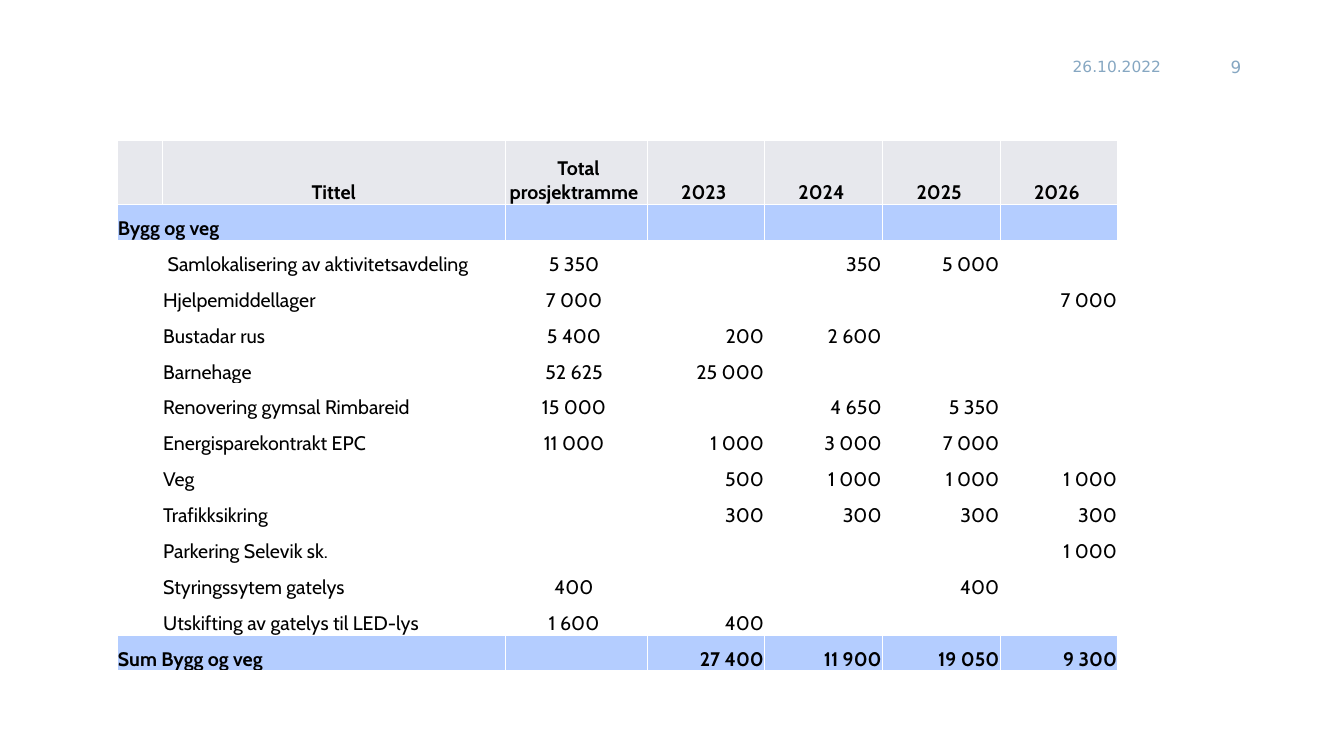
from dataclasses import dataclass

from lxml import etree
from pptx import Presentation
from pptx import util as u
from pptx.dml.color import RGBColor
from pptx.enum import text
from pptx.oxml import ns


@dataclass(frozen=True)
class Theme:
    ink: str = "000000"
    muted: str = "86A7C2"
    head: str = "E7E8ED"
    band: str = "B4CDFF"
    line: str = "FFFFFF"
    font: str = "Cabin"
    plain: str = "DejaVu Sans"
    body: int = 14
    date: int = 11
    page: int = 12


THEME = Theme()
LEFT, MID, RIGHT = text.PP_ALIGN.LEFT, text.PP_ALIGN.CENTER, text.PP_ALIGN.RIGHT

COLS = [0.45, 3.41, 1.41] + [1.17] * 4
HEAD = ["", "Tittel", " Total prosjektramme ", "2023 ", "2024 ", "2025 ", "2026 "]
# Title, total frame, then one amount per year
ITEMS = [
    [" Samlokalisering av aktivitetsavdeling", "5 350 ", "", "350", "5 000", ""],
    ["Hjelpemiddellager", "7 000 ", "", "", "", "7 000"],
    ["Bustadar rus", "5 400 ", "200", "2 600", "", ""],
    ["Barnehage", "52 625 ", "25 000", "", "", ""],
    ["Renovering gymsal Rimbareid", "15 000 ", "", "4 650", "5 350", ""],
    ["Energisparekontrakt EPC", "11 000 ", "1 000", "3 000", "7 000", ""],
    ["Veg", "", "500", "1 000", "1 000", "1 000"],
    ["Trafikksikring", "", "300", "300", "300", "300"],
    ["Parkering Selevik sk.", "", "", "", "", "1 000"],
    ["Styringssytem gatelys", "400 ", "", "", "400", ""],
    ["Utskifting av gatelys til LED-lys", "1 600 ", "400", "", "", ""],
]
GROUP = ["Bygg og veg"] + [""] * 6
TOTAL = ["Sum Bygg og veg", "", "", "27 400", "11 900", "19 050", "9 300"]


def write(frame, words, font, size, color, align=LEFT, bold=False):
    para = frame.paragraphs[0]
    para.alignment = align
    if words:
        run = para.add_run()
        run.text = words
        run.font.name, run.font.size, run.font.bold = font, u.Pt(size), bold
        run.font.color.rgb = RGBColor.from_string(color)


def add_label(slide, box, words, size, align):
    frame = slide.shapes.add_textbox(*map(u.Inches, box)).text_frame
    frame.word_wrap = True
    frame.vertical_anchor = text.MSO_ANCHOR.MIDDLE
    write(frame, words, THEME.plain, size, THEME.muted, align)


def add_header(slide, left, top):
    add_label(slide, (left, top, 1.15, 0.4), "26.10.2022", THEME.date, LEFT)
    add_label(slide, (left + 1.3, top, 0.57, 0.4), "9", THEME.page, RIGHT)


def add_edges(cell):
    props = cell._tc.get_or_add_tcPr()
    for side in ("lnL", "lnR", "lnT", "lnB"):
        line = etree.SubElement(props, ns.qn("a:" + side), w=str(u.Pt(1)))
        fill = etree.SubElement(line, ns.qn("a:solidFill"))
        etree.SubElement(fill, ns.qn("a:srgbClr"), val=THEME.line)


def style_cell(cell, words, fill, align, bold):
    cell.margin_left = cell.margin_right = cell.margin_top = u.Inches(0.01)
    cell.margin_bottom = 0
    cell.vertical_anchor = text.MSO_ANCHOR.BOTTOM
    add_edges(cell)
    if fill:
        cell.fill.solid()
        cell.fill.fore_color.rgb = RGBColor.from_string(fill)
    else:
        cell.fill.background()
    write(cell.text_frame, words, THEME.font, THEME.body, THEME.ink, align, bold)


def add_budget(slide, left, top, width, height):
    # Each row: its words, fill and weight
    rows = [(HEAD, THEME.head, True), (GROUP, THEME.band, True)]
    rows += [([""] + item, None, False) for item in ITEMS]
    rows.append((TOTAL, THEME.band, True))
    table = slide.shapes.add_table(
        len(rows), len(COLS), *map(u.Inches, (left, top, width, height))).table
    table.first_row = table.horz_banding = False

    # Column widths share the box; rows below the header are equal
    for col, part in zip(table.columns, COLS):
        col.width = u.Inches(width * part / sum(COLS))
    first = 0.64
    for i, row in enumerate(table.rows):
        row.height = u.Inches((height - first) / (len(rows) - 1) if i else first)

    aligns = [LEFT, LEFT, MID] + [RIGHT] * 4
    for r, (words, fill, bold) in enumerate(rows):
        for c, word in enumerate(words):
            align = MID if r == 0 else aligns[c]
            style_cell(table.cell(r, c), word, fill, align, bold)

    # Group name and sum label span the first two columns
    for r in (1, len(rows) - 1):
        table.cell(r, 0).merge(table.cell(r, 1))


def main():
    deck = Presentation()
    deck.slide_width, deck.slide_height = u.Inches(13.33), u.Inches(7.5)
    slide = deck.slides.add_slide(deck.slide_layouts[6])
    add_header(slide, 10.54, 0.46)
    add_budget(slide, 1.16, 1.39, 9.93, 5.27)
    deck.save("out.pptx")


if __name__ == "__main__":
    main()
